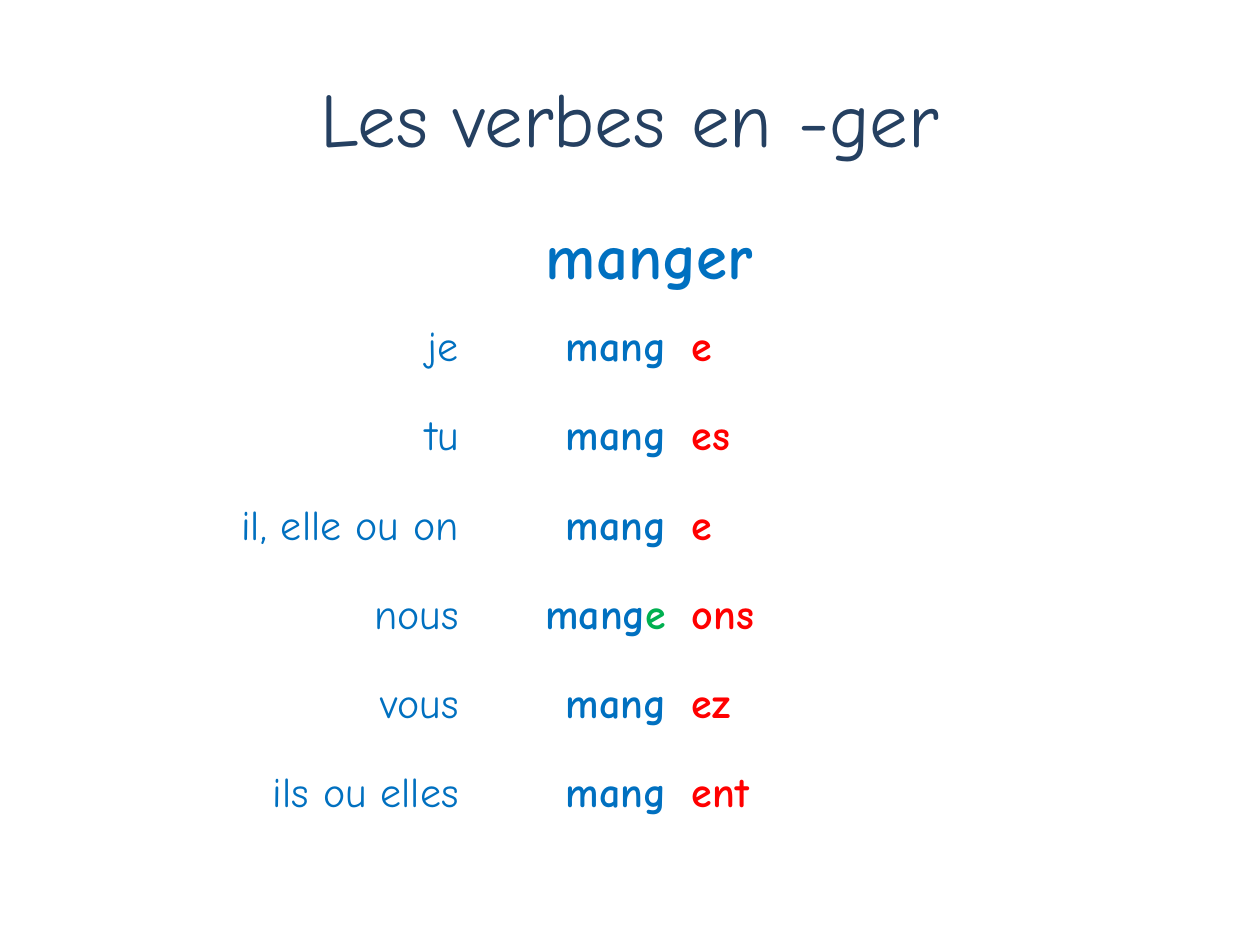
import pptx
import pptx.util
import pptx.dml.color
import pptx.enum.text

Pt = pptx.util.Pt
Align = pptx.enum.text.PP_ALIGN
Anchor = pptx.enum.text.MSO_ANCHOR

FONT = "Comic Neue"
NAVY, BLUE, RED, GREEN, WHITE = "254061", "0070C0", "FF0000", "00B050", "FFFFFF"


def color(value):
    return pptx.dml.color.RGBColor.from_string(value)


def write(para, alignment, spans):
    para.alignment = alignment
    for text, size, bold, hue in spans:
        span = para.add_run()
        span.text = text
        for name, value in {"name": FONT, "size": Pt(size), "bold": bold}.items():
            setattr(span.font, name, value)
        span.font.color.rgb = color(hue)


deck = pptx.Presentation()
deck.slide_width, deck.slide_height = Pt(720), Pt(540)
page = deck.slides.add_slide(deck.slide_layouts[5])

title = page.shapes.title
for name, value in {"left": 36, "top": 21.6, "width": 648, "height": 90}.items():
    setattr(title, name, Pt(value))
title.text_frame.vertical_anchor = Anchor.MIDDLE
write(title.text_frame.paragraphs[0], Align.CENTER, [("Les verbes en -ger", 44, False, NAVY)])

conjugation = [
    ("je", "", "e"),
    ("tu", "", "es"),
    ("il, elle ou on", "", "e"),
    ("nous", "e", "ons"),
    ("vous", "", "ez"),
    ("ils ou elles", "", "ent"),
]
row_count = len(conjugation) + 1
table = page.shapes.add_table(
    row_count, 3, Pt(87.84), Pt(122.4), Pt(566.64), Pt(51 * row_count)
).table
for name in ("first_row", "horz_banding"):
    setattr(table, name, False)
for column, width in zip(table.columns, (181.44, 118.8, 266.4)):
    column.width = Pt(width)
for row in table.rows:
    row.height = Pt(51)
    for cell in row.cells:
        cell.vertical_anchor = Anchor.MIDDLE
        cell.fill.solid()
        cell.fill.fore_color.rgb = color(WHITE)

heading = table.cell(0, 0)
heading.merge(table.cell(0, 2))
write(heading.text_frame.paragraphs[0], Align.CENTER, [("manger", 36, True, BLUE)])

for row_index, (pronoun, linking_vowel, ending) in enumerate(conjugation, start=1):
    stem = [("mang", 24, True, BLUE)]
    if linking_vowel:
        stem.append((linking_vowel, 24, True, GREEN))
    contents = [
        (Align.RIGHT, [(pronoun, 24, False, BLUE)]),
        (Align.RIGHT, stem),
        (Align.LEFT, [(ending, 24, True, RED)]),
    ]
    for column_index, (alignment, spans) in enumerate(contents):
        cell = table.cell(row_index, column_index)
        write(cell.text_frame.paragraphs[0], alignment, spans)

deck.save("out.pptx")
